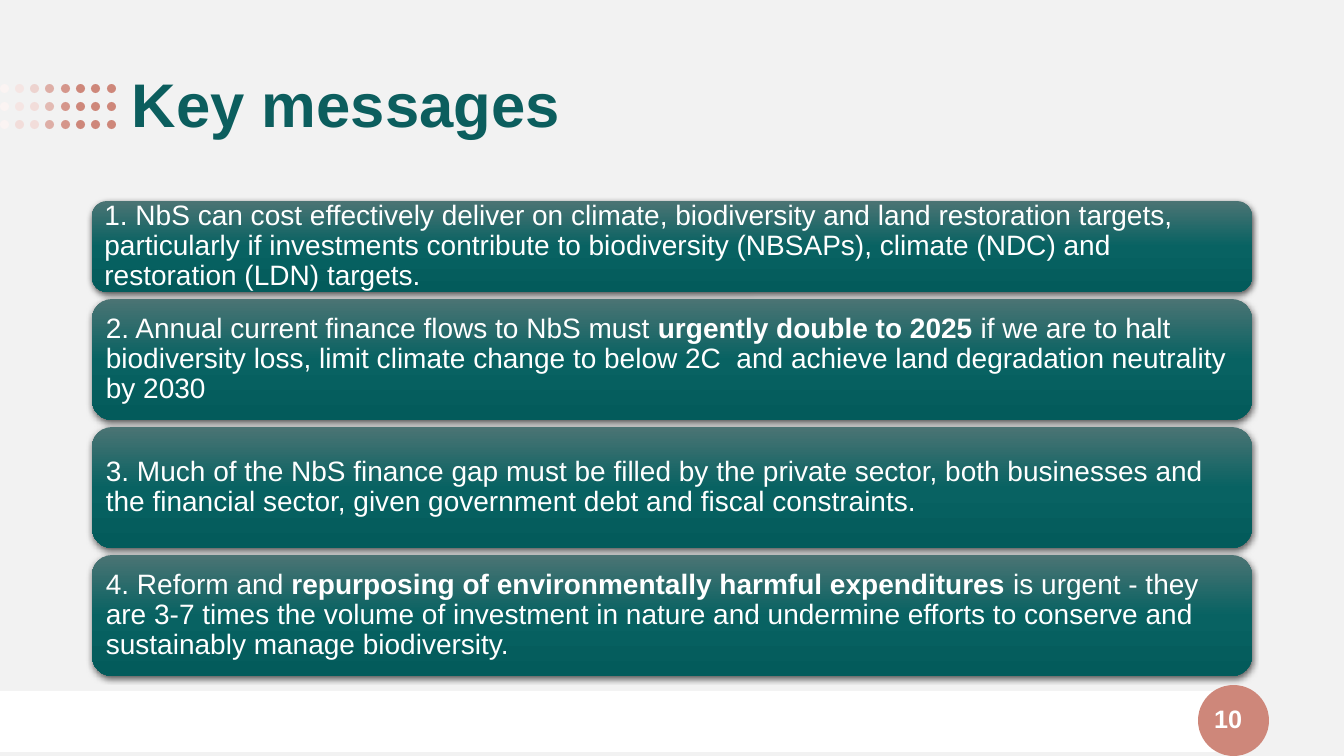
from pptx import Presentation
from pptx.dml.color import RGBColor
from pptx.enum.shapes import MSO_SHAPE as Preset
from pptx.enum.text import MSO_ANCHOR as Anchor, PP_ALIGN as Align
from pptx.oxml import parse_xml
from pptx.oxml.ns import nsdecls
from pptx.util import Pt

SCALE = 12192000 / 1344
COLORS = {
    "background": "F2F2F2",
    "white": "FFFFFF",
    "title": "0C5E5E",
    "card_top": "4B7474",
    "card_middle": "086262",
    "card_bottom": "035B5B",
    "shadow": "000000",
    "coral": "CE877A",
    "coral_1": "FBF4F3",
    "coral_2": "F5E5E3",
    "coral_3": "F2DDDA",
    "coral_4": "EDD3CF",
    "coral_5": "E3BAB3",
    "coral_6": "DEAEA6",
    "coral_7": "D5968B",
}
DOT_FADES = [
    ["coral_1", "coral_2", "coral_4", "coral_6"],
    ["coral_1", "coral_2", "coral_3", "coral_5"],
    ["coral_1", "coral_3", "coral_3", "coral_6"],
]
DOT_SOLID = ["coral_7"] + ["coral"] * 3
MESSAGES = [
    (91, [("1. NbS can cost effectively deliver on climate, biodiversity and land "
           "restoration targets, particularly if investments contribute to biodiversity "
           "(NBSAPs), climate (NDC) and restoration (LDN) targets.", False)]),
    (121, [("2. Annual current finance flows to NbS must ", False),
           ("urgently double to 2025 ", True),
           ("if we are to halt biodiversity loss, limit climate change to below 2C  and "
            "achieve land degradation neutrality by 2030", False)]),
    (121, [("3. Much of the NbS finance gap must be filled by the private sector, both "
            "businesses and the financial sector, given government debt and fiscal "
            "constraints.", False)]),
    (121, [("4. Reform and ", False),
           ("repurposing of environmentally harmful expenditures ", True),
           ("is urgent - they are 3-7 times the volume of investment in nature and "
            "undermine efforts to conserve and sustainably manage biodiversity.", False)]),
]


def px(length):
    return round(length * SCALE)


def rgb(name):
    return RGBColor.from_string(COLORS[name])


class SlideBuilder:
    font = "Arial"

    def __init__(self, presentation):
        self.slide = presentation.slides.add_slide(presentation.slide_layouts[6])
        fill = self.slide.background.fill
        fill.solid()
        fill.fore_color.rgb = rgb("background")

    def shape(self, preset, left, top, width, height, color):
        shape = self.slide.shapes.add_shape(preset, px(left), px(top), px(width), px(height))
        shape.shadow.inherit = False
        shape.fill.solid()
        shape.fill.fore_color.rgb = rgb(color)
        shape.line.fill.background()
        return shape

    def fill_text(self, shape, runs, size, color, align=Align.LEFT):
        frame = shape.text_frame
        frame.word_wrap = True
        frame.vertical_anchor = Anchor.MIDDLE
        paragraph = frame.paragraphs[0]
        paragraph.alignment = align
        paragraph.line_spacing = 0.9
        for text, bold in runs:
            run = paragraph.add_run()
            run.text = text
            run.font.name = self.font
            run.font.size = Pt(size)
            run.font.bold = bold
            run.font.color.rgb = rgb(color)

    def text(self, left, top, width, height, text, size, color, align=Align.LEFT):
        box = self.slide.shapes.add_textbox(px(left), px(top), px(width), px(height))
        self.fill_text(box, [(text, True)], size, color, align)

    def card(self, left, top, width, height, runs):
        shape = self.shape(Preset.ROUNDED_RECTANGLE, left, top, width, height, "card_middle")
        self.shade(shape)
        frame = shape.text_frame
        frame.margin_left = frame.margin_right = px(8)
        frame.margin_top = frame.margin_bottom = px(8)
        self.fill_text(shape, runs, 20, "white")

    def shade(self, shape):
        stops = "".join(
            f'<a:gs pos="{position}"><a:srgbClr val="{COLORS[name]}"/></a:gs>'
            for position, name in ((0, "card_top"), (50000, "card_middle"), (100000, "card_bottom"))
        )
        gradient = parse_xml(
            f'<a:gradFill {nsdecls("a")} rotWithShape="1"><a:gsLst>{stops}</a:gsLst>'
            '<a:lin ang="5400000" scaled="0"/></a:gradFill>'
        )
        effects = parse_xml(
            f'<a:effectLst {nsdecls("a")}>'
            f'<a:outerShdw blurRad="{Pt(4.5)}" dist="{Pt(1.5)}" dir="5400000" '
            f'algn="ctr" rotWithShape="0"><a:srgbClr val="{COLORS["shadow"]}">'
            '<a:alpha val="63000"/></a:srgbClr></a:outerShdw></a:effectLst>'
        )
        properties = shape.element.spPr
        for tag, element in (("solidFill", gradient), ("effectLst", effects)):
            current = properties.find(f"{{*}}{tag}")
            properties.replace(current, element)

    def dots(self, top):
        for row, fade in enumerate(DOT_FADES):
            for column, color in enumerate(fade + DOT_SOLID):
                self.shape(Preset.OVAL, column * 107 // 7, top + row * 18, 9, 9, color)


def main():
    presentation = Presentation()
    presentation.slide_width = px(1344)
    presentation.slide_height = px(756)
    builder = SlideBuilder(presentation)

    builder.shape(Preset.RECTANGLE, 0, 691, 1234, 61, "white")
    builder.shape(Preset.OVAL, 1198, 685, 71, 71, "coral")
    builder.dots(84)
    builder.text(122, 35, 1129, 146, "Key messages", 44, "title")

    top = 201
    for height, runs in MESSAGES:
        builder.card(92, top, 1160, height, runs)
        top += height + 7

    builder.text(950, 700, 302, 40, "10", 18, "white", Align.RIGHT)
    presentation.save("out.pptx")


if __name__ == "__main__":
    main()
